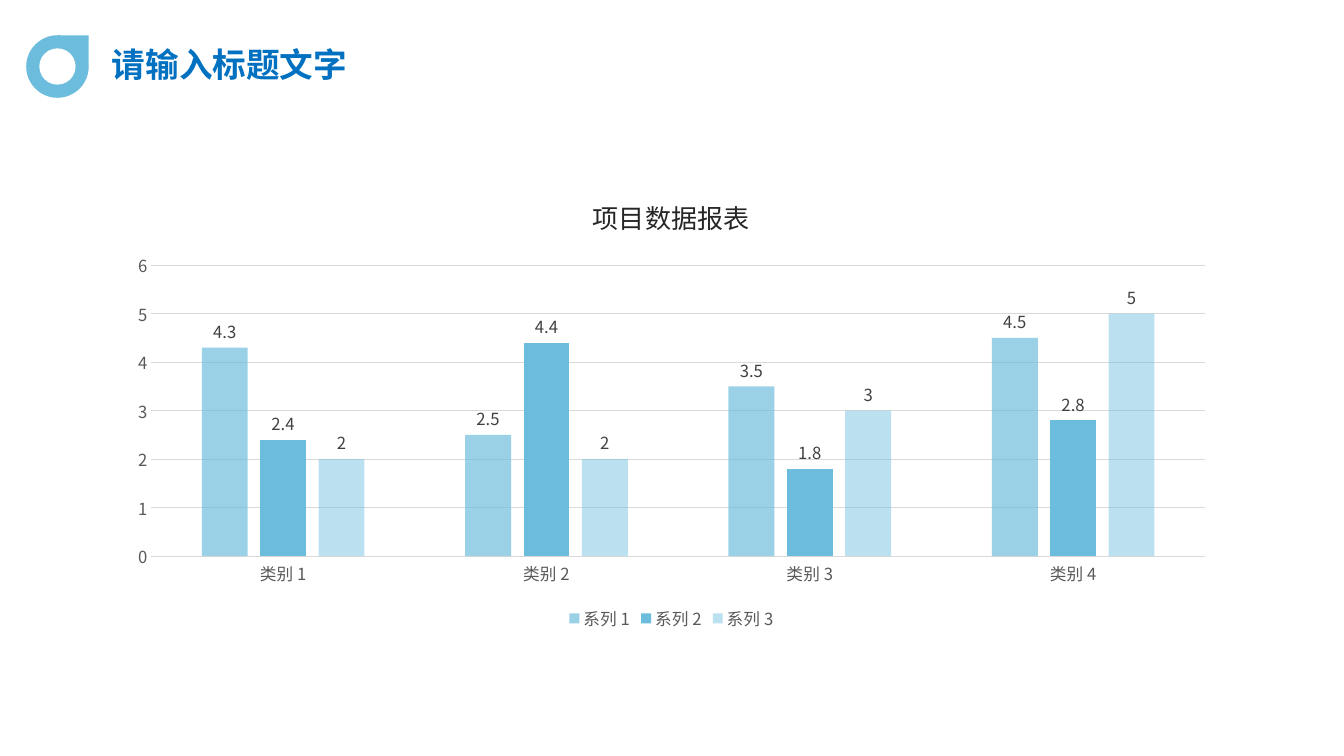
import pptx
import pptx.chart.data
import pptx.dml.color
import pptx.enum.chart
import pptx.enum.shapes
import pptx.enum.text
import pptx.oxml
import pptx.oxml.ns
import pptx.util
from dataclasses import dataclass
from lxml import etree

HEADING = "请输入标题文字"
REPORT_TITLE = "项目数据报表"
CATEGORIES = ["类别 1", "类别 2", "类别 3", "类别 4"]
SERIES = [
    ("系列 1", [4.3, 2.5, 3.5, 4.5], 68),
    ("系列 2", [2.4, 4.4, 1.8, 2.8], 100),
    ("系列 3", [2, 2, 3, 5], 46),
]
SLIDE_SIZE = (13.33, 7.5)
HEADING_BOX = (1.01, 0.39, 2.61, 0.5)
REPORT_BOX = (1.15, 1.74, 11.02, 4.56)
DROP_BOX = (0.26, 0.35, 0.62, 0.62)
HOLE_INSET = 0.13


@dataclass(frozen=True)
class Theme:
    family: str = "Noto Sans CJK SC"
    accent: str = "6CBCDD"
    hole: str = "FFFFFF"
    heading: str = "0070C0"
    report_title: str = "262626"
    axis: str = "595959"
    label: str = "404040"
    grid: str = "D9D9D9"
    heading_size: float = 24
    report_title_size: float = 18.6
    chart_size: float = 11.9
    grid_width: float = 0.75


THEME = Theme()


def rgb(value):
    return pptx.dml.color.RGBColor.from_string(value)


def inches(box):
    return [pptx.util.Inches(length) for length in box]


def style_font(font, size, color, bold=False):
    font.name = THEME.family
    font.size = pptx.util.Pt(size)
    font.bold = bold
    font.color.rgb = rgb(color)


def style_grid_line(line):
    line.color.rgb = rgb(THEME.grid)
    line.width = pptx.util.Pt(THEME.grid_width)


def set_east_asian_font(root):
    for latin in list(root.iter(pptx.oxml.ns.qn("a:latin"))):
        east_asian = etree.Element(pptx.oxml.ns.qn("a:ea"))
        east_asian.set("typeface", THEME.family)
        latin.addnext(east_asian)


def add_heading(slide):
    heading = slide.shapes.title
    heading.left, heading.top, heading.width, heading.height = inches(HEADING_BOX)
    frame = heading.text_frame
    frame.text = HEADING
    frame.word_wrap = True
    frame.auto_size = pptx.enum.text.MSO_AUTO_SIZE.NONE
    frame.vertical_anchor = pptx.enum.text.MSO_ANCHOR.TOP
    paragraph = frame.paragraphs[0]
    paragraph.alignment = pptx.enum.text.PP_ALIGN.LEFT
    paragraph.line_spacing = 1.0
    style_font(paragraph.font, THEME.heading_size, THEME.heading, bold=True)
    set_east_asian_font(heading.element)


def add_badge(slide):
    left, top, width, height = DROP_BOX
    hole_box = (left + HOLE_INSET, top + HOLE_INSET,
                width - 2 * HOLE_INSET, height - 2 * HOLE_INSET)
    kinds = pptx.enum.shapes.MSO_SHAPE
    for kind, box, color in [(kinds.TEAR, DROP_BOX, THEME.accent),
                             (kinds.OVAL, hole_box, THEME.hole)]:
        part = slide.shapes.add_shape(kind, *inches(box))
        part.fill.solid()
        part.fill.fore_color.rgb = rgb(color)
        part.line.fill.background()
        part.shadow.inherit = False


def style_axes(chart):
    for axis in (chart.category_axis, chart.value_axis):
        axis.major_tick_mark = pptx.enum.chart.XL_TICK_MARK.NONE
        axis.minor_tick_mark = pptx.enum.chart.XL_TICK_MARK.NONE
        style_font(axis.tick_labels.font, THEME.chart_size, THEME.axis)
    style_grid_line(chart.category_axis.format.line)
    values = chart.value_axis
    values.minimum_scale, values.maximum_scale, values.major_unit = 0, 6, 1
    values.format.line.fill.background()
    style_grid_line(values.major_gridlines.format.line)


def style_columns(chart):
    plot = chart.plots[0]
    plot.gap_width = 219
    plot.overlap = -27
    plot.vary_by_categories = False
    for series in plot.series:
        series.format.fill.solid()
        series.format.fill.fore_color.rgb = rgb(THEME.accent)
        series.invert_if_negative = False
        labels = series.data_labels
        labels.show_value = True
        labels.position = pptx.enum.chart.XL_LABEL_POSITION.OUTSIDE_END
        style_font(labels.font, THEME.chart_size, THEME.label)
    fills = chart.element.xpath(".//c:ser/c:spPr/a:solidFill/a:srgbClr")
    for fill, (_, _, opacity) in zip(fills, SERIES):
        if opacity < 100:
            alpha = etree.SubElement(fill, pptx.oxml.ns.qn("a:alpha"))
            alpha.set("val", str(opacity * 1000))


def add_report(slide):
    report = pptx.chart.data.CategoryChartData()
    report.categories = CATEGORIES
    for name, values, _ in SERIES:
        report.add_series(name, values)
    chart = slide.shapes.add_chart(
        pptx.enum.chart.XL_CHART_TYPE.COLUMN_CLUSTERED, *inches(REPORT_BOX), report).chart
    style_font(chart.font, THEME.chart_size, THEME.axis)
    chart.has_title = True
    chart.chart_title.include_in_layout = False
    chart.chart_title.text_frame.text = REPORT_TITLE
    style_font(chart.chart_title.text_frame.paragraphs[0].font,
               THEME.report_title_size, THEME.report_title)
    chart.has_legend = True
    chart.legend.position = pptx.enum.chart.XL_LEGEND_POSITION.BOTTOM
    chart.legend.include_in_layout = False
    style_font(chart.legend.font, THEME.chart_size, THEME.axis)
    style_axes(chart)
    style_columns(chart)
    set_east_asian_font(chart.element)


def main():
    deck = pptx.Presentation()
    deck.slide_width, deck.slide_height = inches(SLIDE_SIZE)
    slide = deck.slides.add_slide(deck.slide_layouts[5])
    add_report(slide)
    add_badge(slide)
    add_heading(slide)
    deck.save("out.pptx")


if __name__ == "__main__":
    main()
